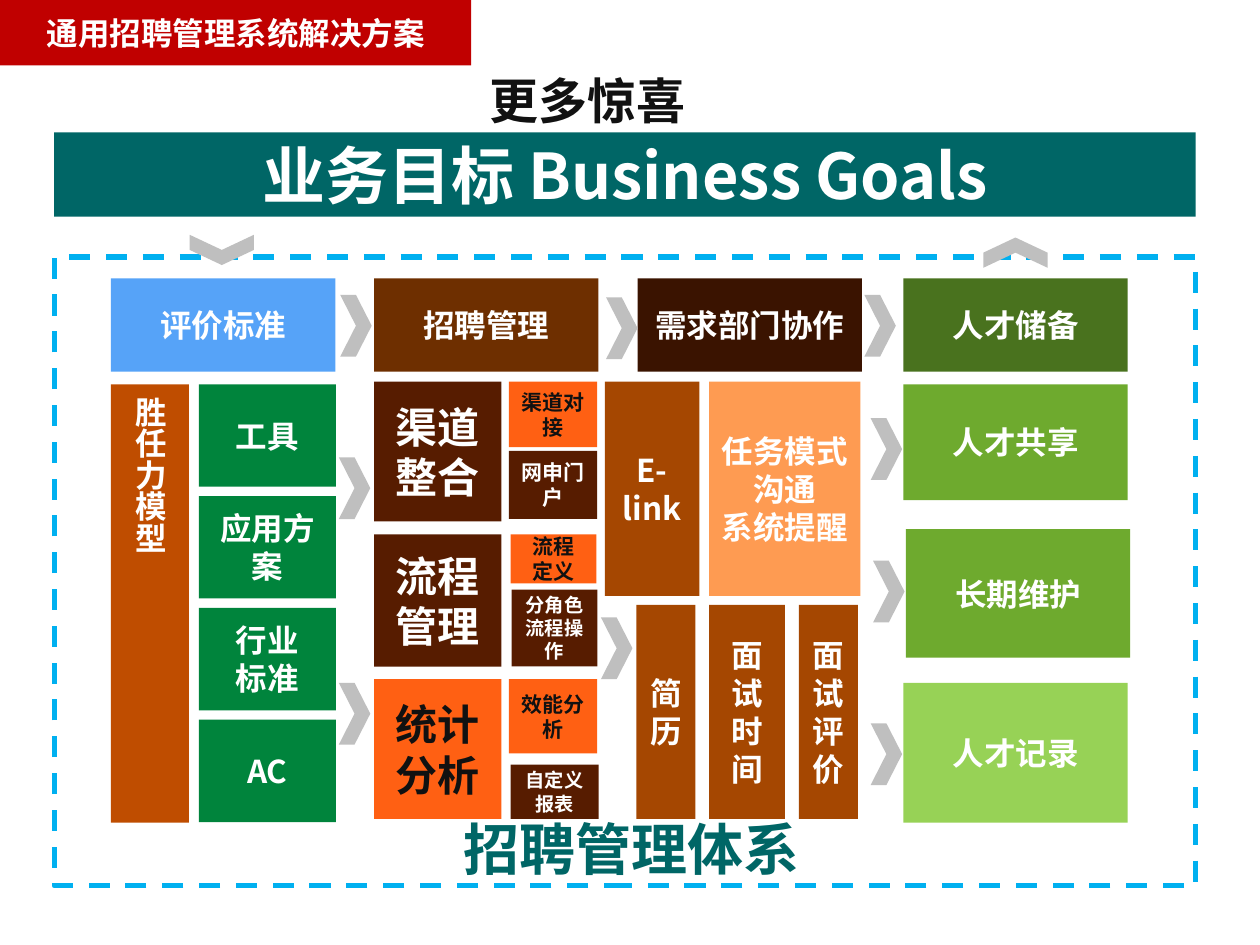
from lxml.etree import SubElement
from pptx import Presentation
from pptx.dml.color import RGBColor
from pptx.enum.dml import MSO_LINE
from pptx.enum.shapes import MSO_SHAPE as SHAPE
from pptx.enum.text import MSO_ANCHOR as ANCHOR, PP_ALIGN as ALIGN
from pptx.oxml.ns import qn
from pptx.util import Pt

FONT = "Noto Sans CJK SC"
COLORS = {
    "white": "FFFFFF", "ink": "111111", "teal": "006666", "red": "C00000",
    "frame": "00B0F0", "arrow": "BFBFBF", "blue": "56A3F8", "rust": "BF4D00",
    "green": "00843C", "brown": "6E2F00", "cocoa": "571C00", "orange": "FF6013",
    "espresso": "3A1300", "copper": "A54701", "peach": "FE9B52",
    "moss": "49721E", "leaf": "6EAA2E", "lime": "97D256",
}


def rgb(name):
    return RGBColor.from_string(COLORS[name])


def write(tf, text, size, color, align=ALIGN.CENTER):
    """Fill a text frame, one paragraph for each line of the text."""
    tf.word_wrap = True
    for i, line in enumerate(text.split("\n")):
        p = tf.add_paragraph() if i else tf.paragraphs[0]
        p.alignment = align
        r = p.add_run()
        r.text = line
        r.font.size, r.font.bold, r.font.name = Pt(size), True, FONT
        r.font.color.rgb = rgb(color)
        SubElement(r._r.get_or_add_rPr(), qn("a:ea"), typeface=FONT)


def add_plain(shapes, kind, box, fill=None):
    sp = shapes.add_shape(kind, *map(Pt, box))
    sp.shadow.inherit = False
    sp.line.fill.background()
    if fill:
        sp.fill.solid()
        sp.fill.fore_color.rgb = rgb(fill)
    else:
        sp.fill.background()
    return sp


def add_block(shapes, box, text, fill, size=18, color="white", align=ALIGN.CENTER):
    sp = add_plain(shapes, SHAPE.RECTANGLE, box, fill)
    sp.text_frame.vertical_anchor = ANCHOR.MIDDLE
    write(sp.text_frame, text, size, color, align)
    return sp


def add_chevron(shapes, x, y, rotation=0):
    w, h = (17.3, 36.7) if rotation else (18, 35.3)
    sp = add_plain(shapes, SHAPE.CHEVRON, (x, y, w, h), "arrow")
    sp.rotation = rotation


def add_label(slide, box, text, size, color):
    tb = slide.shapes.add_textbox(*map(Pt, box))
    write(tb.text_frame, text, size, color)


def add_frame(slide, box):
    sp = add_plain(slide.shapes, SHAPE.RECTANGLE, box)
    sp.line.color.rgb = rgb("frame")
    sp.line.width = Pt(3)
    sp.line.dash_style = MSO_LINE.DASH


def start_column(slide, box, title, fill):
    """Open a group with its header block and return the group's shapes."""
    shapes = slide.shapes.add_group_shape().shapes
    x, y, w, _ = box
    add_block(shapes, (x, y, w, 53.3), title, fill)
    return shapes


def standards_column(slide, box):
    x, y, w, h = box
    shapes = start_column(slide, box, "评价标准", "blue")
    add_chevron(shapes, x + 54.7, y - 34.6, 90)
    top = y + 60.5
    model = add_block(shapes, (x, top, 44.6, h - 60.5), "胜任力模型", "rust",
                      align=ALIGN.LEFT)
    model.text_frame._txBody.bodyPr.set("vert", "eaVert")
    for i, text in enumerate(("工具", "应用方案", "行业\n标准", "AC")):
        add_block(shapes, (x + 50.3, top + i * 63.9, w - 50, 58.5), text, "green")


def recruiting_column(slide, box):
    x, y, _, _ = box
    shapes = start_column(slide, box, "招聘管理", "brown")
    for dx, dy in ((-19.4, 9.4), (-20.2, 102.2), (-20.2, 231.1)):
        add_chevron(shapes, x + dx, y + dy)
    for text, dy, h, fill, color in (
        ("渠道整合", 59, 79.9, "cocoa", "white"),
        ("流程管理", 146.2, 75.6, "cocoa", "white"),
        ("统计分析", 229, 79.9, "orange", "ink"),
    ):
        add_block(shapes, (x, y + dy, 72.7, h), text, fill, 24, color)
    for text, dx, dy, w, h, fill, size, color in (
        ("渠道对接", 77, 59, 50.4, 37.4, "orange", 12, "ink"),
        ("网申门户", 77, 98.6, 50.4, 38.9, "cocoa", 12, "white"),
        ("流程定义", 78, 146.2, 49, 28.1, "orange", 12, "ink"),
        ("分角色流程操作", 78.5, 177.8, 49, 43.9, "cocoa", 11, "white"),
        ("效能分析", 77, 229, 50.4, 42.5, "orange", 12, "ink"),
        ("自定义报表", 78, 277.9, 50.4, 31, "cocoa", 11, "white"),
    ):
        add_block(shapes, (x + dx, y + dy, w, h), text, fill, size, color)


def collaboration_column(slide, box):
    x, y, _, _ = box
    shapes = start_column(slide, box, "需求部门协作", "espresso")
    for dx, dy in ((-18, 10.8), (-20.9, 193.7)):
        add_chevron(shapes, x + dx, y + dy)
    for text, dx, dy, w, fill in (
        ("E-link", -18.7, 59, 54, "copper"),
        ("任务模式沟通\n系统提醒", 41, 59, 86.4, "peach"),
        ("简历", -0.7, 186.5, 33.8, "copper"),
        ("面试时间", 41, 186.5, 43.2, "copper"),
        ("面试评价", 92.2, 186.5, 33.8, "copper"),
    ):
        add_block(shapes, (x + dx, y + dy, w, 122.4), text, fill)


def talent_column(slide, box):
    x, y, w, _ = box
    shapes = start_column(slide, box, "人才储备", "moss")
    add_chevron(shapes, x + 55.4, y - 33.1, 270)
    add_chevron(shapes, x - 22.3, y + 9.4)
    for text, dx, dy, h, fill, arrow_dy in (
        ("人才共享", 0, 60.5, 66.2, "leaf", 79.9),
        ("长期维护", 1.4, 143.3, 73.4, "leaf", 161.3),
        ("人才记录", 0, 231.1, 79.9, "lime", 254.2),
    ):
        add_block(shapes, (x + dx, y + dy, w, h), text, fill)
        add_chevron(shapes, x + dx - 18.7, y + arrow_dy)


def main():
    prs = Presentation()
    prs.slide_width, prs.slide_height = Pt(720), Pt(540)
    slide = prs.slides.add_slide(prs.slide_layouts[6])
    add_frame(slide, (31, 146.9, 652.3, 359.3))
    add_block(slide.shapes, (31, 75.6, 652.3, 48.2), "业务目标 Business Goals",
              "teal", 36)
    for column, x in ((standards_column, 63.4), (collaboration_column, 364.3),
                      (recruiting_column, 213.8), (talent_column, 516.2)):
        column(slide, (x, 159.1, 128.2, 311))
    add_label(slide, (231.8, 462.2, 258.5, 46.1), "招聘管理体系", 32, "teal")
    add_block(slide.shapes, (0, 0, 269.3, 37.4), "通用招聘管理系统解决方案", "red")
    add_label(slide, (174.2, 36.7, 323.3, 41.8), "更多惊喜", 28, "ink")
    prs.save("out.pptx")


if __name__ == "__main__":
    main()
